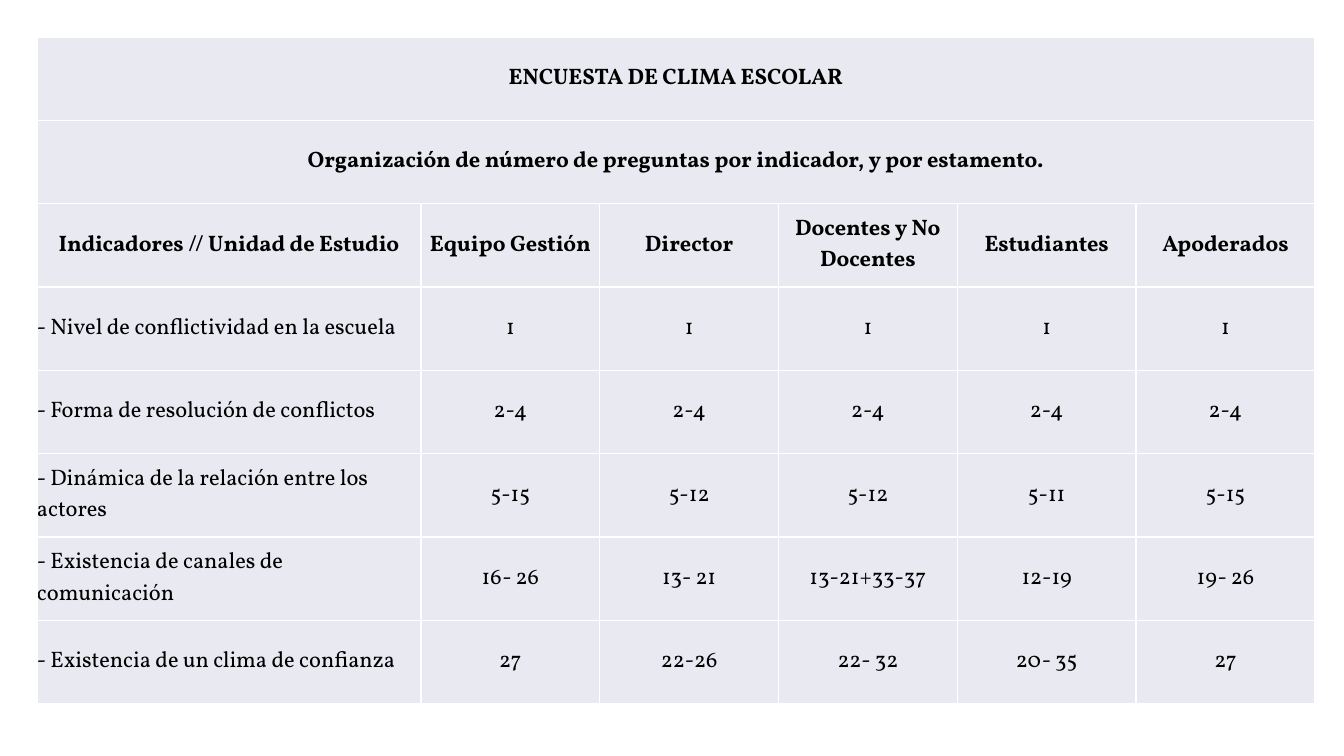
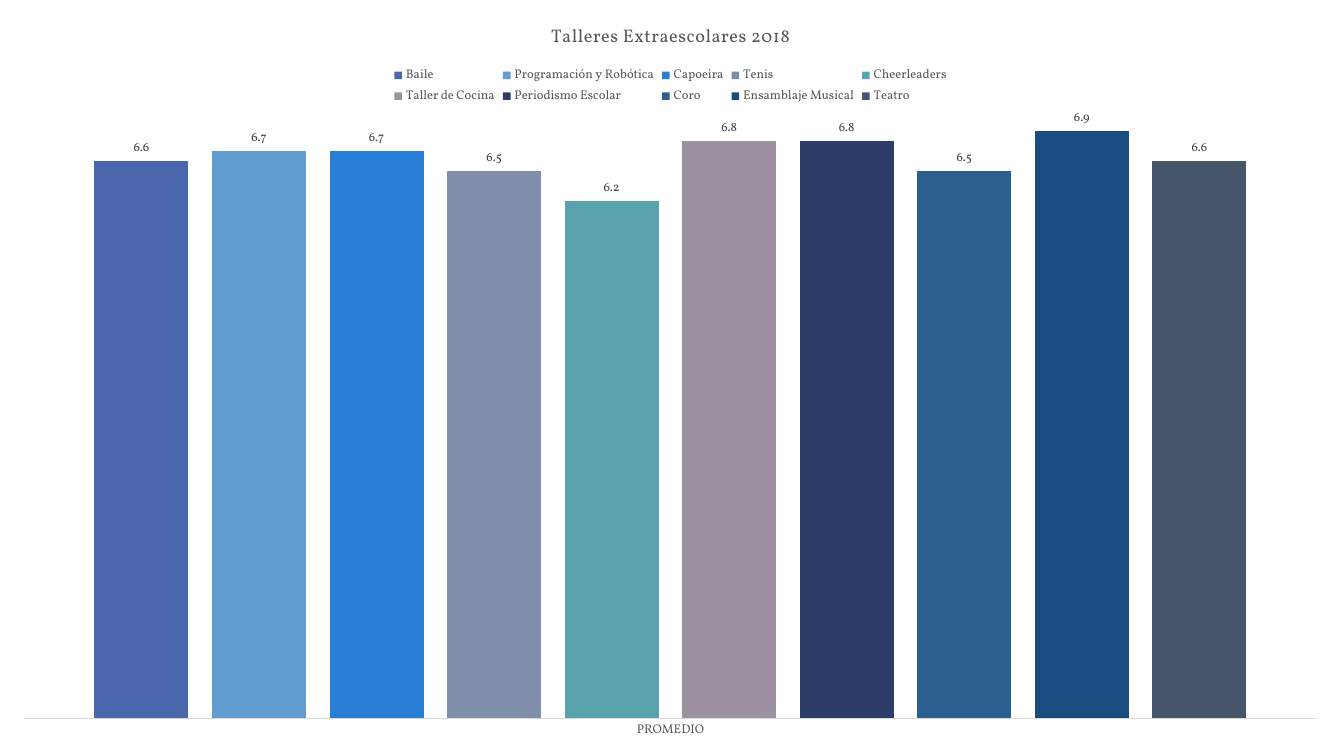
"""Build two slides: a school climate survey table and a workshop ratings chart."""
import dataclasses

import lxml.etree
import pptx
import pptx.chart.data
import pptx.dml.color
import pptx.enum.chart
import pptx.enum.text
import pptx.oxml
import pptx.oxml.ns
import pptx.util

PX_PER_INCH = 100.8
SLIDE_WIDTH, SLIDE_HEIGHT = 1344, 756


@dataclasses.dataclass(frozen=True)
class Theme:
    """Colours, font and type sizes of the deck."""

    font: str = "Vollkorn"
    ink: str = "000000"
    muted: str = "595959"
    label: str = "404040"
    axis: str = "D9D9D9"
    border: str = "FFFFFF"
    cell: str = "E9EAF1"
    table_size: int = 16
    title_size: int = 13
    chart_size: int = 10
    small_size: int = 9


THEME = Theme()

HEADINGS = [
    "ENCUESTA DE CLIMA ESCOLAR",
    "Organización de número de preguntas por indicador, y por estamento.",
]
UNITS = ["Indicadores // Unidad de Estudio", "Equipo Gestión", "Director",
         "Docentes y No Docentes", "Estudiantes", "Apoderados"]
INDICATORS = [
    ["- Nivel de conflictividad en la escuela"] + ["1"] * 5,
    ["- Forma de resolución de conflictos"] + ["2-4"] * 5,
    ["- Dinámica de la relación entre los actores",
     "5-15", "5-12", "5-12", "5-11", "5-15"],
    ["- Existencia de canales de comunicación",
     "16- 26", "13- 21", "13-21+33-37", "12-19", "19- 26"],
    ["- Existencia de un clima de confianza",
     "27", "22-26", "22- 32", "20- 35", "27"],
]
WORKSHOPS = [
    ("Baile", 6.6, "4A66AC"),
    ("Programación y Robótica", 6.7, "629DD1"),
    ("Capoeira", 6.7, "297FD5"),
    ("Tenis", 6.5, "7F8FA9"),
    ("Cheerleaders", 6.2, "5AA2AE"),
    ("Taller de Cocina", 6.8, "9D90A0"),
    ("Periodismo Escolar", 6.8, "2C3D67"),
    ("Coro", 6.5, "2A5F8E"),
    ("Ensamblaje Musical", 6.9, "194C80"),
    ("Teatro", 6.6, "47556A"),
]


def px(length):
    """Turn pixels into EMU."""
    return pptx.util.Emu(round(length * 914400 / PX_PER_INCH))


def rgb(code):
    """Turn a hex code into a colour."""
    return pptx.dml.color.RGBColor.from_string(code)


def style_font(font, *, size, color, bold=False):
    """Give a font the deck's typeface and the stated format."""
    font.name = THEME.font
    font.size = pptx.util.Pt(size)
    font.bold = bold
    font.color.rgb = rgb(color)


def write_text(frame, text, *, size, color, bold=False, centered=True, spacing=0):
    """Write one formatted paragraph into a text frame."""
    para = frame.paragraphs[0]
    align = pptx.enum.text.PP_ALIGN
    para.alignment = align.CENTER if centered else align.LEFT
    span = para.add_run()
    span.text = text
    style_font(span.font, size=size, color=color, bold=bold)
    if spacing:
        span.font._element.set("spc", str(spacing))


def style_cell(cell):
    """Fill a cell, clear its margins and draw its four borders."""
    cell.margin_left = cell.margin_right = cell.margin_top = cell.margin_bottom = 0
    cell.vertical_anchor = pptx.enum.text.MSO_ANCHOR.MIDDLE
    cell.fill.solid()
    cell.fill.fore_color.rgb = rgb(THEME.cell)
    properties = cell._tc.get_or_add_tcPr()
    for index, side in enumerate(("lnL", "lnR", "lnT", "lnB")):
        properties.insert(index, pptx.oxml.parse_xml(
            f'<a:{side} {pptx.oxml.ns.nsdecls("a")} w="{pptx.util.Pt(1)}"><a:solidFill>'
            f'<a:srgbClr val="{THEME.border}"/></a:solidFill></a:{side}>'))


def add_survey_table(page, left, top, width, height, first_width):
    """Add the table of question numbers by indicator and group."""
    rows = [[heading] for heading in HEADINGS] + [UNITS] + INDICATORS
    header_rows = len(HEADINGS) + 1
    table = page.shapes.add_table(
        len(rows), len(UNITS), px(left), px(top), px(width), px(height)).table
    table.first_row = table.horz_banding = False
    for index, column in enumerate(table.columns):
        column.width = px((width - first_width) / (len(UNITS) - 1) if index else first_width)
    for row in table.rows:
        row.height = px(height / len(rows))
    for cell in table.iter_cells():
        style_cell(cell)
    for row_index, texts in enumerate(rows):
        is_header = row_index < header_rows
        if len(texts) == 1:
            table.cell(row_index, 0).merge(table.cell(row_index, len(UNITS) - 1))
        for column_index, text in enumerate(texts):
            write_text(table.cell(row_index, column_index).text_frame, text,
                       size=THEME.table_size, color=THEME.ink, bold=is_header,
                       centered=is_header or column_index > 0)


def place_plot(chart, **fractions):
    """Set the inner plot area as fractions of the chart."""
    area = chart._chartSpace.chart.plotArea
    for old in area.findall(pptx.oxml.ns.qn("c:layout")):
        area.remove(old)
    layout = lxml.etree.Element(pptx.oxml.ns.qn("c:layout"))
    manual = lxml.etree.SubElement(layout, pptx.oxml.ns.qn("c:manualLayout"))
    settings = {"layoutTarget": "inner", "xMode": "edge", "yMode": "edge", **fractions}
    for name, value in settings.items():
        lxml.etree.SubElement(manual, pptx.oxml.ns.qn(f"c:{name}")).set("val", str(value))
    area.insert(0, layout)


def style_axes(chart):
    """Show only the category axis and fix the value range."""
    values = chart.value_axis
    values.minimum_scale, values.maximum_scale = 1, 7
    values.has_major_gridlines = False
    values.visible = False
    categories = chart.category_axis
    categories.major_tick_mark = pptx.enum.chart.XL_TICK_MARK.NONE
    categories.format.line.color.rgb = rgb(THEME.axis)
    categories.format.line.width = pptx.util.Pt(0.75)
    style_font(categories.tick_labels.font, size=THEME.small_size, color=THEME.muted)


def style_series(series, color):
    """Colour one series and label its column."""
    series.format.fill.solid()
    series.format.fill.fore_color.rgb = rgb(color)
    series.invert_if_negative = False
    labels = series.data_labels
    labels.show_value = True
    labels.number_format = "0.0"
    labels.number_format_is_linked = False
    labels.position = pptx.enum.chart.XL_LABEL_POSITION.OUTSIDE_END
    style_font(labels.font, size=THEME.small_size, color=THEME.label)


def add_workshop_chart(page, left, top, width, height):
    """Add the column chart of average workshop ratings."""
    data = pptx.chart.data.CategoryChartData(number_format="0.0")
    data.categories = ["PROMEDIO"]
    for name, rating, _ in WORKSHOPS:
        data.add_series(name, [rating])
    chart = page.shapes.add_chart(
        pptx.enum.chart.XL_CHART_TYPE.COLUMN_CLUSTERED,
        px(left), px(top), px(width), px(height), data).chart
    style_font(chart.font, size=THEME.chart_size, color=THEME.ink)
    chart.has_title = True
    write_text(chart.chart_title.text_frame, "Talleres Extraescolares 2018",
               size=THEME.title_size, color=THEME.muted, spacing=50)
    chart.has_legend = True
    chart.legend.position = pptx.enum.chart.XL_LEGEND_POSITION.TOP
    chart.legend.include_in_layout = False
    style_font(chart.legend.font, size=THEME.small_size, color=THEME.muted)
    style_axes(chart)
    plot = chart.plots[0]
    plot.gap_width, plot.overlap = 150, -25
    plot.vary_by_categories = False
    for series, (_, _, color) in zip(plot.series, WORKSHOPS):
        style_series(series, color)
    place_plot(chart, x=0.02, y=0.16, w=0.96, h=0.79)


def main():
    """Build and save the deck."""
    deck = pptx.Presentation()
    deck.slide_width, deck.slide_height = px(SLIDE_WIDTH), px(SLIDE_HEIGHT)
    blank = deck.slide_layouts.get_by_name("Blank")
    add_survey_table(deck.slides.add_slide(blank), 37, 37, 1278, 667, first_width=384)
    add_workshop_chart(deck.slides.add_slide(blank), -3, 0, 1347, SLIDE_HEIGHT)
    deck.save("out.pptx")


if __name__ == "__main__":
    main()
